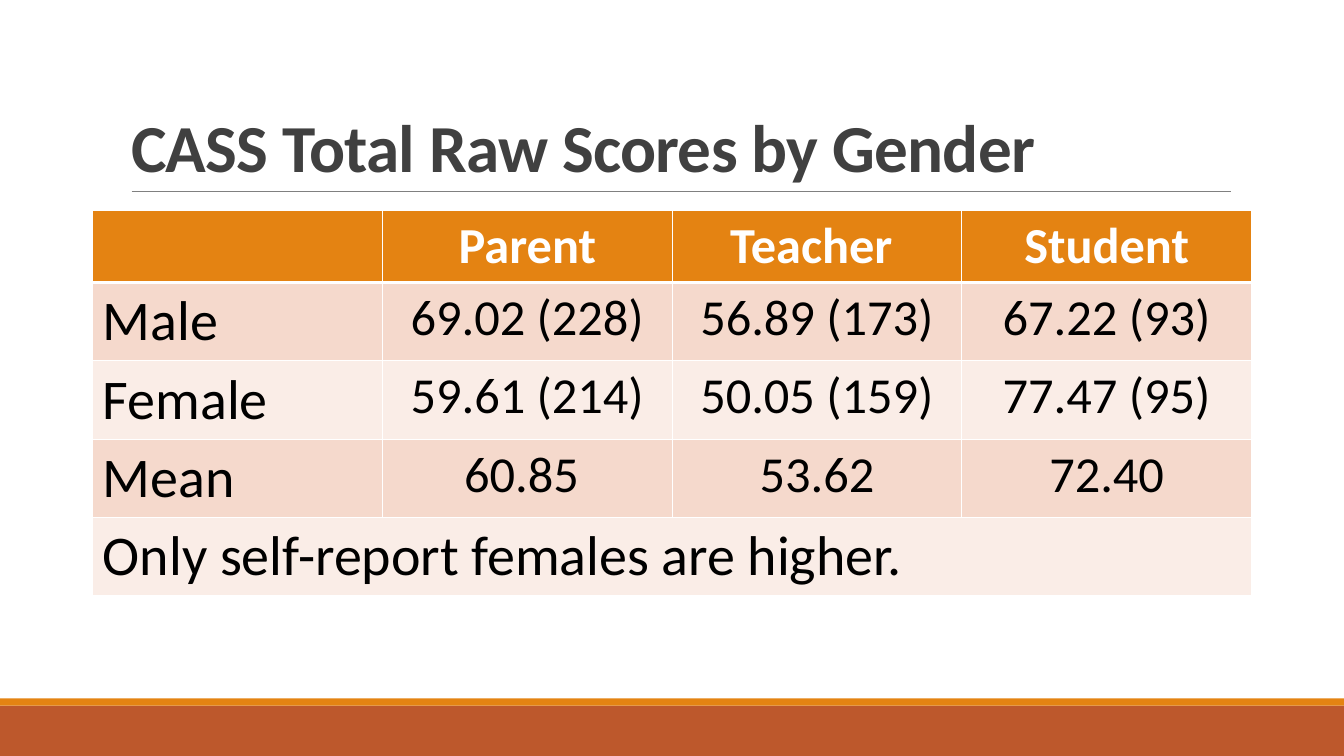
from dataclasses import dataclass

from lxml.etree import SubElement
from pptx import Presentation
from pptx.dml.color import RGBColor
from pptx.enum.shapes import MSO_CONNECTOR, MSO_SHAPE
from pptx.enum.text import MSO_ANCHOR, MSO_AUTO_SIZE, PP_ALIGN
from pptx.oxml.ns import qn
from pptx.slide import Slide
from pptx.table import _Cell
from pptx.text.text import _Paragraph
from pptx.util import Cm, Pt


@dataclass(frozen=True)
class Theme:
    font: str = "Calibri"
    orange: str = "E48312"
    rust: str = "BD582C"
    rule: str = "808080"
    title: str = "404040"
    white: str = "FFFFFF"
    black: str = "000000"
    bands: tuple[str, str] = ("F5D9CC", "FAEDE7")
    title_size: int = 48
    label_size: int = 40
    value_size: int = 36


@dataclass(frozen=True)
class Bar:
    top: float
    height: float
    color: str


THEME = Theme()
SLIDE_WIDTH, SLIDE_HEIGHT = 33.87, 19.05
FOOTER_BARS = [Bar(17.78, 1.27, THEME.rust), Bar(17.6, 0.18, THEME.orange)]
SCORES = [
    ["", "Parent", "Teacher ", "Student"],
    ["Male", "69.02 (228)", "56.89 (173)", "67.22 (93)"],
    ["Female", "59.61 (214)", "50.05 (159)", "77.47 (95)"],
    ["Mean", "60.85 ", "53.62", "72.40"],
    ["Only self-report females are higher."],
]
COLUMN_WIDTH, HEADER_HEIGHT, ROW_HEIGHT = 7.3, 1.79, 1.97


def add_span(para: _Paragraph, text: str, size: int, color: str, bold: bool = False):
    span = para.add_run()
    span.text = text
    span.font.name = THEME.font
    span.font.size = Pt(size)
    span.font.bold = bold
    span.font.color.rgb = RGBColor.from_string(color)
    return span


def add_bar(slide: Slide, bar: Bar) -> None:
    box = slide.shapes.add_shape(
        MSO_SHAPE.RECTANGLE, 0, Cm(bar.top), Cm(SLIDE_WIDTH), Cm(bar.height))
    box.shadow.inherit = False
    box.fill.solid()
    box.fill.fore_color.rgb = RGBColor.from_string(bar.color)
    box.line.fill.background()


def add_title_rule(slide: Slide) -> None:
    rule = slide.shapes.add_connector(
        MSO_CONNECTOR.STRAIGHT, Cm(3.32), Cm(4.83), Cm(31.01), Cm(4.83))
    rule.line.color.rgb = RGBColor.from_string(THEME.rule)
    rule.line.width = Pt(0.5)
    SubElement(rule._element.spPr, qn("a:effectLst"))


def write_title(slide: Slide, text: str) -> None:
    title = slide.shapes.title
    title.left, title.top, title.width, title.height = Cm(3.05), Cm(0.79), Cm(27.94), Cm(4.04)
    frame = title.text_frame
    frame.word_wrap = True
    frame.auto_size = MSO_AUTO_SIZE.NONE
    frame.vertical_anchor = MSO_ANCHOR.BOTTOM
    para = frame.paragraphs[0]
    para.alignment = PP_ALIGN.LEFT
    para.line_spacing = 0.85
    span = add_span(para, text, THEME.title_size, THEME.title, bold=True)
    span.font._element.set("spc", "-50")


def style_cell(cell: _Cell, fill: str, top: int, bottom: int) -> None:
    properties = cell._tc.get_or_add_tcPr()
    for side, width in (("L", 1), ("R", 1), ("T", top), ("B", bottom)):
        border = SubElement(properties, qn(f"a:ln{side}"), w=str(Pt(width)))
        paint = SubElement(border, qn("a:solidFill"))
        SubElement(paint, qn("a:srgbClr"), val=THEME.white)
    cell.fill.solid()
    cell.fill.fore_color.rgb = RGBColor.from_string(fill)


def add_score_table(slide: Slide) -> None:
    rows, columns = len(SCORES), len(SCORES[0])
    table = slide.shapes.add_table(
        rows, columns, Cm(2.34), Cm(5.31), Cm(columns * COLUMN_WIDTH),
        Cm(HEADER_HEIGHT + (rows - 1) * ROW_HEIGHT)).table
    for column in table.columns:
        column.width = Cm(COLUMN_WIDTH)

    for r, row in enumerate(table.rows):
        header = r == 0
        row.height = Cm(HEADER_HEIGHT if header else ROW_HEIGHT)
        fill = THEME.orange if header else THEME.bands[(r - 1) % 2]
        for cell in row.cells:
            style_cell(cell, fill, top=3 if r == 1 else 1, bottom=3 if header else 1)
        for c, text in enumerate(SCORES[r]):
            if not text:
                continue
            para = table.cell(r, c).text_frame.paragraphs[0]
            para.alignment = PP_ALIGN.CENTER if c else PP_ALIGN.LEFT
            add_span(para, text, THEME.value_size if c else THEME.label_size,
                     THEME.white if header else THEME.black, bold=header)

    # The closing remark spans the whole table
    table.cell(rows - 1, 0).merge(table.cell(rows - 1, columns - 1))


def main() -> None:
    deck = Presentation()
    deck.slide_width, deck.slide_height = Cm(SLIDE_WIDTH), Cm(SLIDE_HEIGHT)
    slide = deck.slides.add_slide(deck.slide_layouts.get_by_name("Title Only"))

    # Footer bars and title
    for bar in FOOTER_BARS:
        add_bar(slide, bar)
    add_title_rule(slide)
    write_title(slide, "CASS Total Raw Scores by Gender")

    # Scores
    add_score_table(slide)
    deck.save("out.pptx")


if __name__ == "__main__":
    main()
